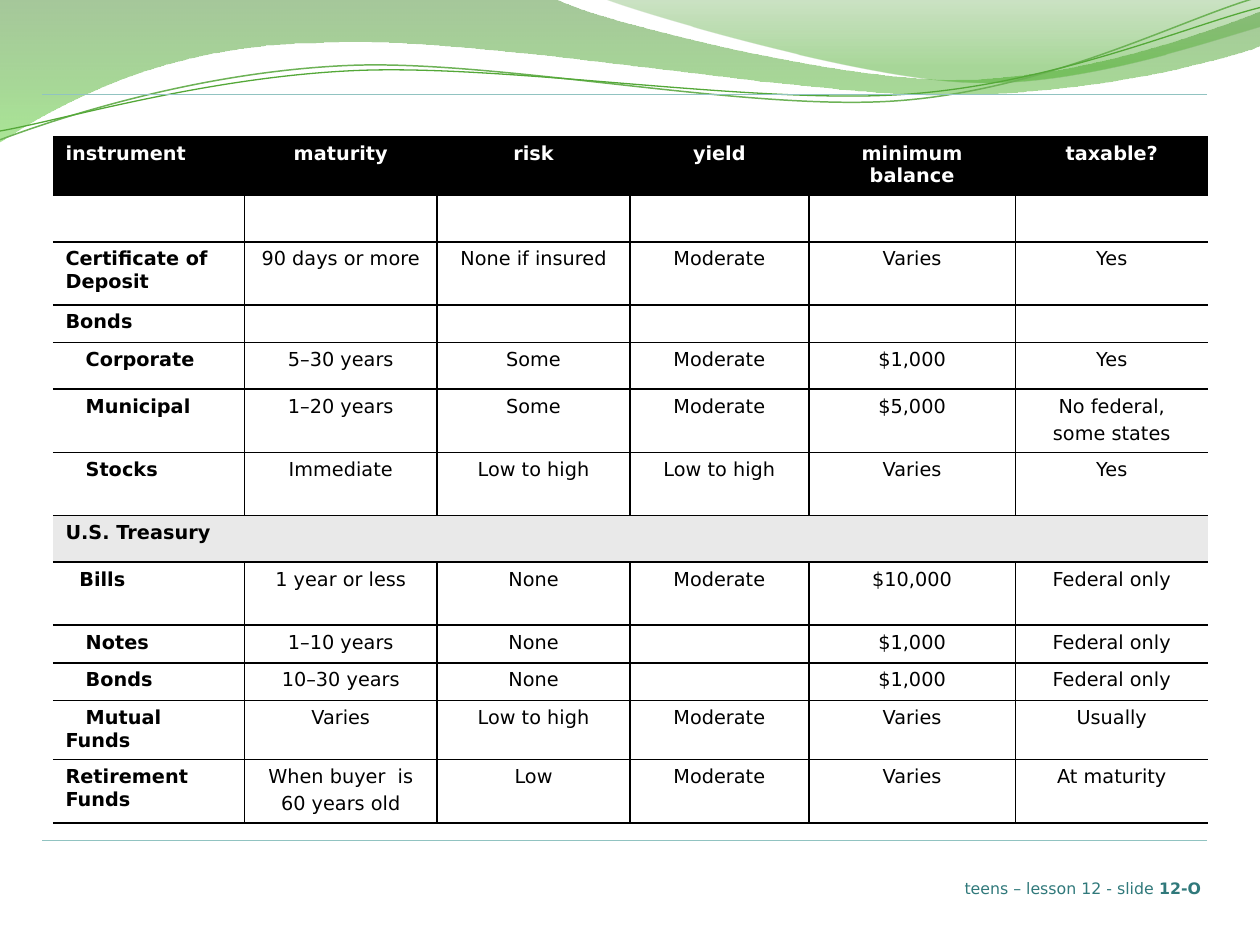
from lxml import etree
from pptx import Presentation
from pptx.dml.color import RGBColor
from pptx.enum import shapes, text
from pptx.oxml.ns import qn
from pptx.util import Inches, Pt

FONT = "DejaVu Sans"
BLACK, WHITE, GREY = "000000", "FFFFFF", "E9E9E9"
RULE, TEAL = "91C3C1", "30797B"

# Points are (x, y) in inches; six numbers make a Bezier curve, two a straight line.
WAVES = [
    ([(0, -0.01), (4.4, -0.01), (4.76, 0.17, 6.64, 0.63, 7.58, 0.63),
      (8.53, 0.63, 9.58, 0.26, 10, 0.09), (10.01, 0.36),
      (9.83, 0.44, 8.7, 0.76, 7.46, 0.75), (6.22, 0.75, 3.82, 0.28, 2.57, 0.34),
      (1.29, 0.35, 0.46, 0.83, -0.01, 1.13)],
     [(0, "3A8521", 45), (1, "64D13F", 55)]),
    ([(4.79, -0.01), (5.09, 0.11, 6.82, 0.62, 7.69, 0.65),
      (8.56, 0.69, 9.61, 0.32, 10, 0.21), (10, 0)],
     [(0, "56A13D", 30), (0.8, "40A81E", 45)]),
]
STRANDS = [
    ([(0, 1.11), (0.48, 0.93, 1.58, 0.57, 2.77, 0.52),
      (3.95, 0.47, 5.93, 0.89, 7.13, 0.8), (8.33, 0.71, 9.38, 0.15, 9.98, -0.02)],
     "6DB256", 0.85),
    ([(0, 1.04), (0.47, 0.96, 1.64, 0.61, 2.83, 0.56),
      (4.03, 0.51, 5.97, 0.83, 7.17, 0.75), (8.36, 0.67, 9.41, 0.21, 10, 0.06)],
     "54A838", 0.75),
]
RULE_TOPS = [0.75, 6.67]

COLUMNS = [1.52, 1.53, 1.53, 1.42, 1.64, 1.53]
# Row height, first-line indent of the instrument, cells
ROWS = [
    (0.47, 0, ["instrument", "maturity", "risk", "yield", "minimum balance", "taxable?"]),
    (0.37, 0, [""] * 6),
    (0.5, 0, ["Certificate of Deposit", "90 days or more", "None if insured",
              "Moderate", "Varies", "Yes"]),
    (0.3, 0, ["Bonds", "", "", "", "", ""]),
    (0.37, 0.16, ["Corporate", "5–30 years", "Some", "Moderate", "$1,000", "Yes"]),
    (0.5, 0.16, ["Municipal", "1–20 years", "Some", "Moderate", "$5,000",
                 "No federal,\nsome states"]),
    (0.5, 0.16, ["Stocks", "Immediate", "Low to high", "Low to high", "Varies", "Yes"]),
    (0.37, 0, ["U.S. Treasury"]),
    (0.5, 0.11, ["Bills", "1 year or less", "None", "Moderate", "$10,000", "Federal only"]),
    (0.3, 0.16, ["Notes", "1–10 years", "None", "", "$1,000", "Federal only"]),
    (0.3, 0.16, ["Bonds", "10–30 years", "None", "", "$1,000", "Federal only"]),
    (0.37, 0.16, ["Mutual Funds", "Varies", "Low to high", "Moderate", "Varies", "Usually"]),
    (0.5, 0, ["Retirement Funds", "When buyer  is\n60 years old", "Low", "Moderate",
              "Varies", "At maturity"]),
]


def color(hex_string):
    return RGBColor.from_string(hex_string)


def add_outline(page, path, close):
    """Build a freeform through the path's end points, then bend its curved segments."""
    anchors = [(Inches(part[-2]), Inches(part[-1])) for part in path]
    builder = page.shapes.build_freeform(*anchors[0], scale=1.0)
    builder.add_line_segments(anchors[1:], close=close)
    shape = builder.convert_to_shape()
    shape.shadow.inherit = False
    segments = list(shape._element.iter(qn("a:lnTo")))
    for segment, part in zip(segments, path[1:]):
        if len(part) == 6:
            segment.tag = qn("a:cubicBezTo")
            for index, (x, y) in enumerate((part[:2], part[2:4])):
                segment.insert(index, etree.Element(
                    qn("a:pt"), x=str(Inches(x) - shape.left), y=str(Inches(y) - shape.top)))
    return shape


def add_wave(page, path, stops):
    wave = add_outline(page, path, True)
    wave.line.fill.background()
    wave.fill.gradient()
    wave.fill.gradient_angle = 270
    for stop, (position, shade, _) in zip(wave.fill.gradient_stops, stops):
        stop.position = position
        stop.color.rgb = color(shade)
    for node, (_, _, opacity) in zip(wave._element.iter(qn("a:srgbClr")), stops):
        etree.SubElement(node, qn("a:alpha"), val=str(opacity * 1000))


def add_strand(page, path, shade, width):
    strand = add_outline(page, path, False)
    strand.fill.background()
    strand.line.color.rgb = color(shade)
    strand.line.width = Pt(width)


def add_rule(page, top):
    rule = page.shapes.add_connector(
        shapes.MSO_CONNECTOR.STRAIGHT, Inches(9.58), Inches(top), Inches(0.33), Inches(top))
    rule.line.color.rgb = color(RULE)
    rule.line.width = Pt(0.75)
    etree.SubElement(rule._element.spPr, qn("a:effectLst"))


def set_borders(cell, visible):
    """Draw the sides named in visible (of L, R, T, B) and hide the others."""
    properties = cell._tc.get_or_add_tcPr()
    for index, side in enumerate("LRTB"):
        line = etree.Element(qn(f"a:ln{side}"), w=str(Pt(1)))
        if side in visible:
            fill = etree.SubElement(line, qn("a:solidFill"))
            etree.SubElement(fill, qn("a:srgbClr"), val=BLACK)
        else:
            etree.SubElement(line, qn("a:noFill"))
        properties.insert(index, line)


def fill_cell(cell, words, bold, shade, centered, indent):
    cell.text = words
    for index, para in enumerate(cell.text_frame.paragraphs):
        if indent:
            para._p.get_or_add_pPr().set("indent", str(Inches(indent)))
        if index:
            para.space_before = Pt(2.5)
        para.alignment = text.PP_ALIGN.CENTER if centered else text.PP_ALIGN.LEFT
        para.font.name, para.font.size, para.font.bold = FONT, Pt(11), bold
        para.font.color.rgb = color(shade)
        if not words:
            etree.SubElement(para._p, qn("a:endParaRPr"), sz="1100")


def add_instruments(page):
    table = page.shapes.add_table(
        len(ROWS), len(COLUMNS), Inches(0.42), Inches(1.08), Inches(sum(COLUMNS)),
        Inches(sum(height for height, _, _ in ROWS))).table
    table.horz_banding = False
    for column, width in zip(table.columns, COLUMNS):
        column.width = Inches(width)
    for r, (height, indent, cells) in enumerate(ROWS):
        table.rows[r].height = Inches(height)
        header, section = r == 0, len(cells) == 1
        if section:
            table.cell(r, 0).merge(table.cell(r, len(COLUMNS) - 1))
        for c in range(len(COLUMNS)):
            cell = table.cell(r, c)
            if header or section:
                cell.fill.solid()
                cell.fill.fore_color.rgb = color(BLACK if header else GREY)
            else:
                cell.fill.background()
            sides = "B" if header else "TB"
            if not section:
                sides += "L" * (c > 0) + "R" * (c < len(COLUMNS) - 1)
            set_borders(cell, sides)
            if c < len(cells):
                fill_cell(cell, cells[c], header or c == 0, WHITE if header else BLACK,
                          c > 0, 0 if c else indent)


def add_footer(page):
    box = page.shapes.add_textbox(Inches(7.51), Inches(6.92), Inches(2.12), Inches(0.25))
    frame = box.text_frame
    frame.word_wrap = False
    frame.auto_size = text.MSO_AUTO_SIZE.SHAPE_TO_FIT_TEXT
    frame.vertical_anchor = text.MSO_ANCHOR.MIDDLE
    para = frame.paragraphs[0]
    para.alignment = text.PP_ALIGN.RIGHT
    para.font.name, para.font.size = FONT, Pt(9)
    para.font.color.rgb = color(TEAL)
    for words, bold in [("teens – lesson 12 - slide", False), (" 12-O", True)]:
        span = para.add_run()
        span.text, span.font.bold = words, bold


def main():
    deck = Presentation()
    deck.slide_width, deck.slide_height = Inches(10), Inches(7.5)
    page = deck.slides.add_slide(deck.slide_layouts[6])
    for path, stops in WAVES:
        add_wave(page, path, stops)
    for path, shade, width in STRANDS:
        add_strand(page, path, shade, width)
    for top in RULE_TOPS:
        add_rule(page, top)
    add_footer(page)
    add_instruments(page)
    deck.save("out.pptx")


if __name__ == "__main__":
    main()
